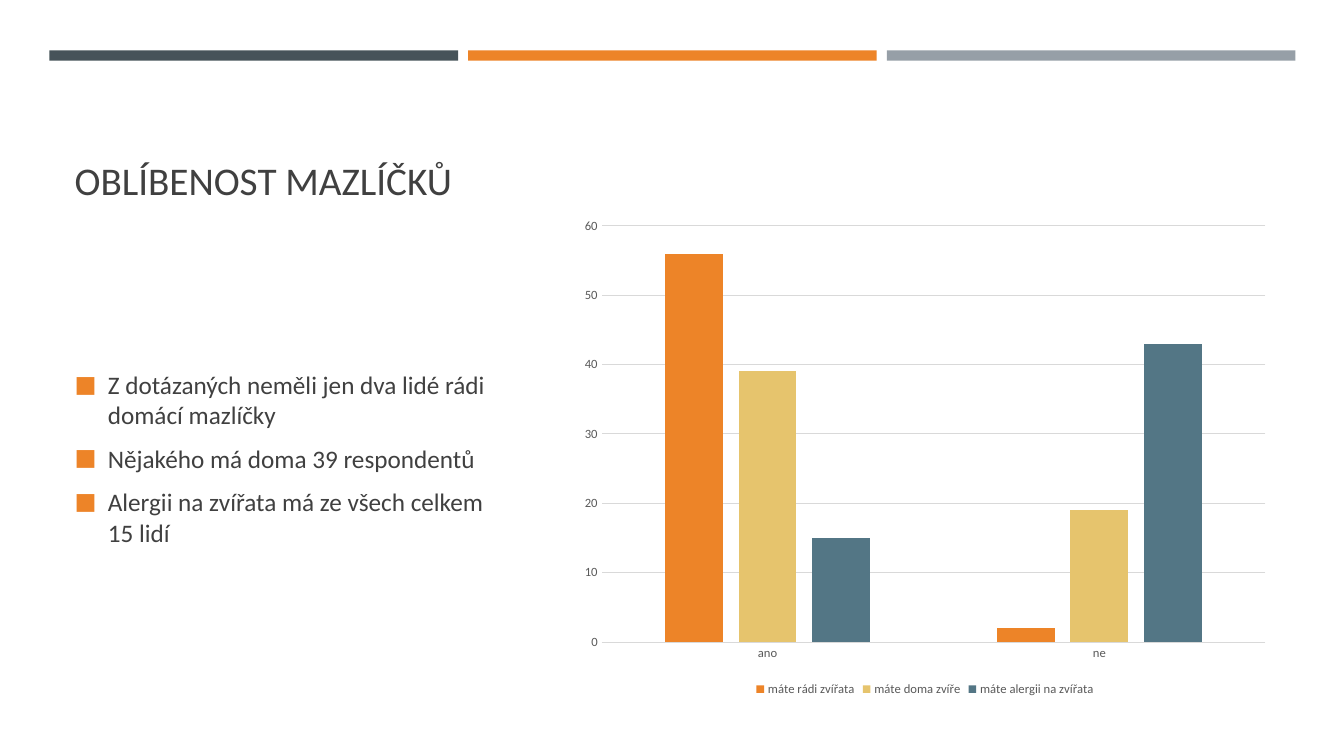
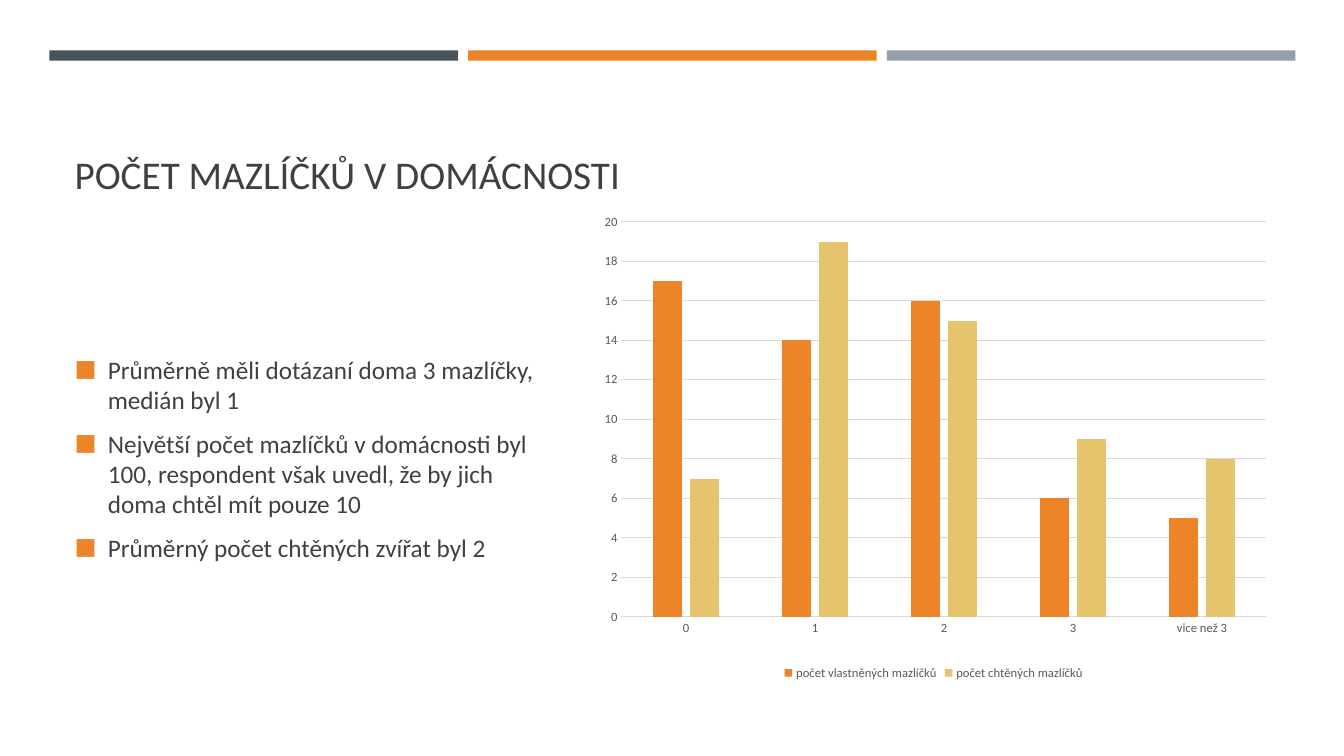
from lxml import etree
from pptx import Presentation
from pptx import util as u
from pptx.chart.data import CategoryChartData
from pptx.dml.color import RGBColor
from pptx.enum import chart as ch, shapes, text
from pptx.oxml import ns

FONT = "Calibri"
INK, MUTED, RULE = "404040", "595959", "D9D9D9"
SLATE, ORANGE, GREY, SAND, TEAL = "465359", "ED8428", "969FA7", "E6C46D", "537685"


def color(hex_string):
    return RGBColor.from_string(hex_string)


def add_xml(parent, tag, **attributes):
    child = etree.SubElement(parent, ns.qn(tag))
    for name, value in attributes.items():
        child.set(name, str(value))
    return child


class Deck:
    """Holds the style and the current slide; boxes are percentages of the slide."""

    MARGIN = 4.8
    TITLE_WIDTH, TITLE_HEIGHT = 90.45, 17.33
    BODY_TOP, BODY_HEIGHT = 34.13, 52.93
    BAND_LEFT, BAND_TOP, BAND_WIDTH, BAND_HEIGHT, BAND_GAP = 3.68, 6.67, 30.4, 1.35, 0.75

    def __init__(self):
        self.prs = Presentation()
        self.prs.slide_width, self.prs.slide_height = u.Inches(13.33), u.Inches(7.5)
        self.slide = None

    def box(self, left, top, width, height):
        across, down = self.prs.slide_width / 100, self.prs.slide_height / 100
        return [int(v) for v in (left * across, top * down, width * across, height * down)]

    def new_slide(self):
        self.slide = self.prs.slides.add_slide(self.prs.slide_layouts[1])
        self.bands()

    def bands(self):
        for i, fill in enumerate((SLATE, ORANGE, GREY)):
            left = self.BAND_LEFT + i * (self.BAND_WIDTH + self.BAND_GAP)
            band = self.slide.shapes.add_shape(
                shapes.MSO_SHAPE.RECTANGLE,
                *self.box(left, self.BAND_TOP, self.BAND_WIDTH, self.BAND_HEIGHT))
            band.shadow.inherit = False
            band.fill.solid()
            band.fill.fore_color.rgb = color(fill)
            band.line.fill.background()

    def place(self, holder, box, anchor):
        holder.left, holder.top, holder.width, holder.height = self.box(*box)
        frame = holder.text_frame
        frame.word_wrap = True
        frame.auto_size = text.MSO_AUTO_SIZE.NONE
        frame.vertical_anchor = anchor
        return frame

    def style(self, font, size, ink):
        font.name, font.size = FONT, u.Pt(size)
        font.color.rgb = color(ink)

    def title(self, wording, top):
        frame = self.place(self.slide.shapes.title,
                           (self.MARGIN, top, self.TITLE_WIDTH, self.TITLE_HEIGHT),
                           text.MSO_ANCHOR.BOTTOM)
        frame.text = wording
        heading = frame.paragraphs[0]
        heading.alignment = text.PP_ALIGN.LEFT
        self.style(heading.font, 28, INK)

    def bullets(self, findings, width):
        frame = self.place(self.slide.placeholders[1],
                           (self.MARGIN, self.BODY_TOP, width, self.BODY_HEIGHT),
                           text.MSO_ANCHOR.MIDDLE)
        frame.text = "\n".join(findings)
        for finding in frame.paragraphs:
            finding.space_after = u.Pt(6)
            # Square orange bullet with a hanging indent
            props = finding._p.get_or_add_pPr()
            indent = u.Inches(0.33)
            props.set("marL", str(indent))
            props.set("indent", str(-indent))
            add_xml(add_xml(props, "a:buClr"), "a:srgbClr", val=ORANGE)
            add_xml(props, "a:buSzPct", val=92000)
            add_xml(props, "a:buFont", typeface=FONT)
            add_xml(props, "a:buChar", char="■")
            self.style(finding.font, 18, INK)

    def columns(self, box, answers, counts, top_value, step, plot_area=None):
        data = CategoryChartData()
        data.categories = answers
        for question, values in counts.items():
            data.add_series(question, values)
        chart = self.slide.shapes.add_chart(
            ch.XL_CHART_TYPE.COLUMN_CLUSTERED, *self.box(*box), data).chart
        chart.has_title = False
        self.style(chart.font, 10, "000000")

        # Columns
        plot = chart.plots[0]
        plot.gap_width, plot.overlap, plot.vary_by_categories = 219, -27, False
        for series, fill in zip(plot.series, (ORANGE, SAND, TEAL)):
            series.format.fill.solid()
            series.format.fill.fore_color.rgb = color(fill)
            series.invert_if_negative = False

        # Axes and gridlines
        scale = chart.value_axis
        scale.minimum_scale, scale.maximum_scale, scale.major_unit = 0, top_value, step
        scale.has_major_gridlines = True
        for axis in (chart.category_axis, scale):
            axis.major_tick_mark = axis.minor_tick_mark = ch.XL_TICK_MARK.NONE
            self.style(axis.tick_labels.font, 9, MUTED)
        for line in (chart.category_axis.format.line, scale.major_gridlines.format.line):
            line.width = u.Pt(0.75)
            line.color.rgb = color(RULE)
        scale.format.line.fill.background()

        # Legend
        chart.has_legend = True
        chart.legend.position = ch.XL_LEGEND_POSITION.BOTTOM
        chart.legend.include_in_layout = False
        self.style(chart.legend.font, 9, MUTED)
        if plot_area:
            self.fix_plot_area(chart, plot_area)

    def fix_plot_area(self, chart, shares):
        area = chart.element.find(".//" + ns.qn("c:plotArea"))
        for automatic in area.findall(ns.qn("c:layout")):
            area.remove(automatic)
        layout = add_xml(area, "c:layout")
        area.insert(0, layout)
        manual = add_xml(layout, "c:manualLayout")
        add_xml(manual, "c:layoutTarget", val="inner")
        for mode in ("c:xMode", "c:yMode"):
            add_xml(manual, mode, val="edge")
        for side, share in zip("xywh", shares):
            add_xml(manual, f"c:{side}", val=share)


def main():
    deck = Deck()

    # Popularity of pets
    deck.new_slide()
    deck.title("OBLÍBENOST MAZLÍČKŮ", top=10.27)
    deck.bullets(["Z dotázaných neměli jen dva lidé rádi domácí mazlíčky",
                  "Nějakého má doma 39 respondentů",
                  "Alergii na zvířata má ze všech celkem 15 lidí"], width=33.98)
    deck.columns((42.46, 27.6, 52.74, 65.07), ["ano", "ne"],
                 {"máte rádi zvířata": (56, 2),
                  "máte doma zvíře": (39, 19),
                  "máte alergii na zvířata": (15, 43)},
                 top_value=60, step=10)

    # Number of pets per household
    deck.new_slide()
    deck.title("POČET MAZLÍČKŮ V DOMÁCNOSTI", top=9.47)
    deck.bullets(["Průměrně měli dotázaní doma 3 mazlíčky, medián byl 1",
                  "Největší počet mazlíčků v domácnosti byl 100, respondent však uvedl, "
                  "že by jich doma chtěl mít pouze 10",
                  "Průměrný počet chtěných zvířat byl 2"], width=35.93)
    deck.columns((43.66, 26.8, 51.61, 63.73), ["0", "1", "2", "3", "vice než 3"],
                 {"počet vlastněných mazlíčků": (17, 14, 16, 6, 5),
                  "počet chtěných mazlíčků": (7, 19, 15, 9, 8)},
                 top_value=20, step=2, plot_area=(0.05, 0.04, 0.93, 0.82))

    deck.prs.save("out.pptx")


if __name__ == "__main__":
    main()
